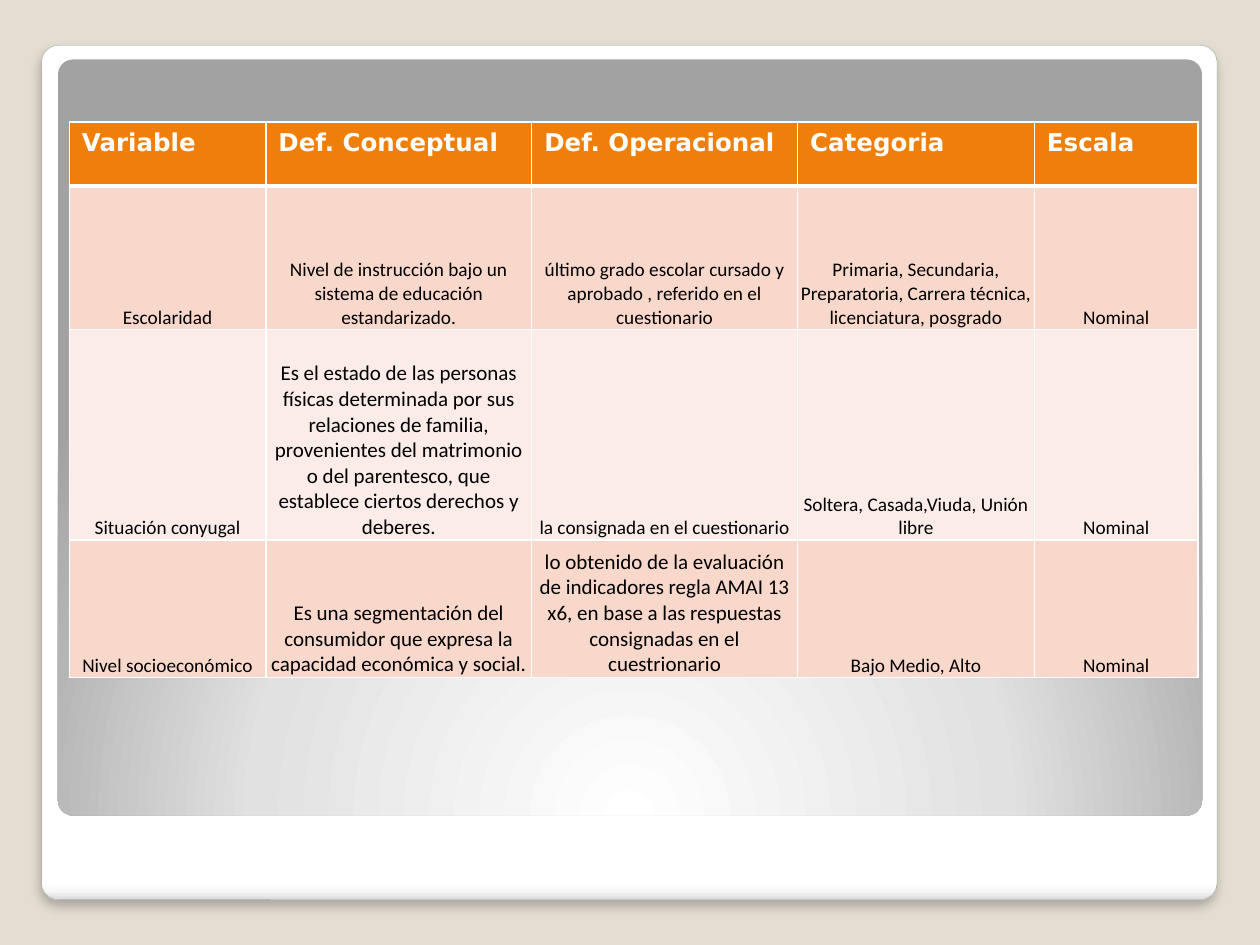
import pptx
import pptx.util
import pptx.oxml
import pptx.oxml.ns
import pptx.dml.color
import pptx.enum.shapes
import pptx.enum.text

NS = pptx.oxml.ns.nsdecls("a")


def hue(code):
    return pptx.dml.color.RGBColor.from_string(code)


def blend(shape, stops, style):
    marks = "".join(
        f'<a:gs pos="{at * 1000}"><a:srgbClr val="{code}"/></a:gs>' for at, code in stops)
    shape.fill.background()
    props = shape.fill._xPr
    old = props.find(pptx.oxml.ns.qn("a:noFill"))
    props.replace(old, pptx.oxml.parse_xml(
        f'<a:gradFill {NS} rotWithShape="1"><a:gsLst>{marks}</a:gsLst>{style}</a:gradFill>'))


deck = pptx.Presentation()
deck.slide_width = pptx.util.Inches(10)
deck.slide_height = pptx.util.Inches(7.5)
wide = deck.slide_width / 100
high = deck.slide_height / 100
slide = deck.slides.add_slide(deck.slide_layouts[6])
slide.background.fill.solid()
slide.background.fill.fore_color.rgb = hue("E3DED1")

frames = [
    ((3.3, 4.8, 93.3, 90.4),
     [(0, "FFFFFF"), (98, "FFFFFF"), (99, "F7F7F7"), (100, "DADADA")],
     '<a:lin ang="5400000" scaled="0"/>'),
    ((4.6, 6.3, 90.8, 80),
     [(0, "FFFFFF"), (55, "E1E1E1"), (100, "A2A2A2")],
     '<a:path path="circle"><a:fillToRect l="50000" t="175000" r="50000" b="-75000"/></a:path>'),
]
panels = []
for (left, top, width, height), stops, style in frames:
    panel = slide.shapes.add_shape(
        pptx.enum.shapes.MSO_SHAPE.ROUNDED_RECTANGLE,
        int(left * wide), int(top * high), int(width * wide), int(height * high))
    panel.adjustments[0] = 0.02
    panel.shadow.inherit = False
    panel.line.fill.background()
    blend(panel, stops, style)
    panels.append(panel)

card = panels[0]
card.line.color.rgb = hue("A4A4A4")
card.line.width = pptx.util.Pt(0.16)
glow = card._element.spPr.find(pptx.oxml.ns.qn("a:effectLst"))
glow.append(pptx.oxml.parse_xml(
    f'<a:outerShdw {NS} blurRad="{pptx.util.Pt(6)}" dist="{pptx.util.Pt(4)}" dir="5400000"'
    ' algn="ctr" rotWithShape="0"><a:srgbClr val="000000"><a:alpha val="25000"/>'
    '</a:srgbClr></a:outerShdw>'))

data = [
    ["Variable", "Def. Conceptual", "Def. Operacional", "Categoria", "Escala"],
    ["Escolaridad",
     "Nivel de instrucción bajo un sistema de educación estandarizado.",
     "último grado escolar cursado y aprobado , referido en el cuestionario",
     "Primaria, Secundaria, Preparatoria, Carrera técnica, licenciatura, posgrado",
     "Nominal"],
    ["Situación conyugal",
     "Es el estado de las personas físicas determinada por sus relaciones de familia, "
     "provenientes del matrimonio o del parentesco, que establece ciertos derechos y deberes.",
     "la consignada en el cuestionario",
     "Soltera, Casada,Viuda, Unión libre",
     "Nominal"],
    ["Nivel socioeconómico",
     "Es una segmentación del consumidor que expresa la capacidad económica y social.",
     "lo obtenido de la evaluación de indicadores regla AMAI 13 x6, en base a las "
     "respuestas consignadas en el cuestrionario",
     "Bajo Medio, Alto",
     "Nominal"],
]
cols = [15.6, 21.1, 21.1, 18.8, 13]
rows = [6.8, 15.2, 22.27, 14.53]
fills = ["F07F09", "F9D8CC", "FCECE7", "F9D8CC"]
large = {(2, 1), (3, 1), (3, 2)}

grid = slide.shapes.add_table(
    len(rows), len(cols), int(5.5 * wide), int(12.9 * high),
    int(sum(cols) * wide), int(sum(rows) * high)).table
for col, share in zip(grid.columns, cols):
    col.width = int(share * wide)
for row, share in zip(grid.rows, rows):
    row.height = int(share * high)

for r, line in enumerate(data):
    for c, text in enumerate(line):
        cell = grid.cell(r, c)
        cell.fill.solid()
        cell.fill.fore_color.rgb = hue(fills[r])
        para = cell.text_frame.paragraphs[0]
        run = para.add_run()
        run.text = text
        font = run.font
        font.bold = r == 0
        if r == 0:
            font.name = "DejaVu Sans"
            font.size = pptx.util.Pt(14)
            font.color.rgb = hue("FFFFFF")
        else:
            font.name = "Calibri"
            font.size = pptx.util.Pt(12 if (r, c) in large else 11)
            font.color.rgb = hue("000000")
            para.alignment = pptx.enum.text.PP_ALIGN.CENTER
            cell.vertical_anchor = pptx.enum.text.MSO_ANCHOR.BOTTOM
            cell.margin_left = cell.margin_right = cell.margin_top = pptx.util.Inches(0.01)
            cell.margin_bottom = 0
        props = cell._tc.get_or_add_tcPr()
        for i, side in enumerate("LRTB"):
            thick = 3 if (r, side) in [(0, "B"), (1, "T")] else 1
            props.insert(i, pptx.oxml.parse_xml(
                f'<a:ln{side} {NS} w="{pptx.util.Pt(thick)}"><a:solidFill>'
                f'<a:srgbClr val="FFFFFF"/></a:solidFill></a:ln{side}>'))

deck.save("out.pptx")
